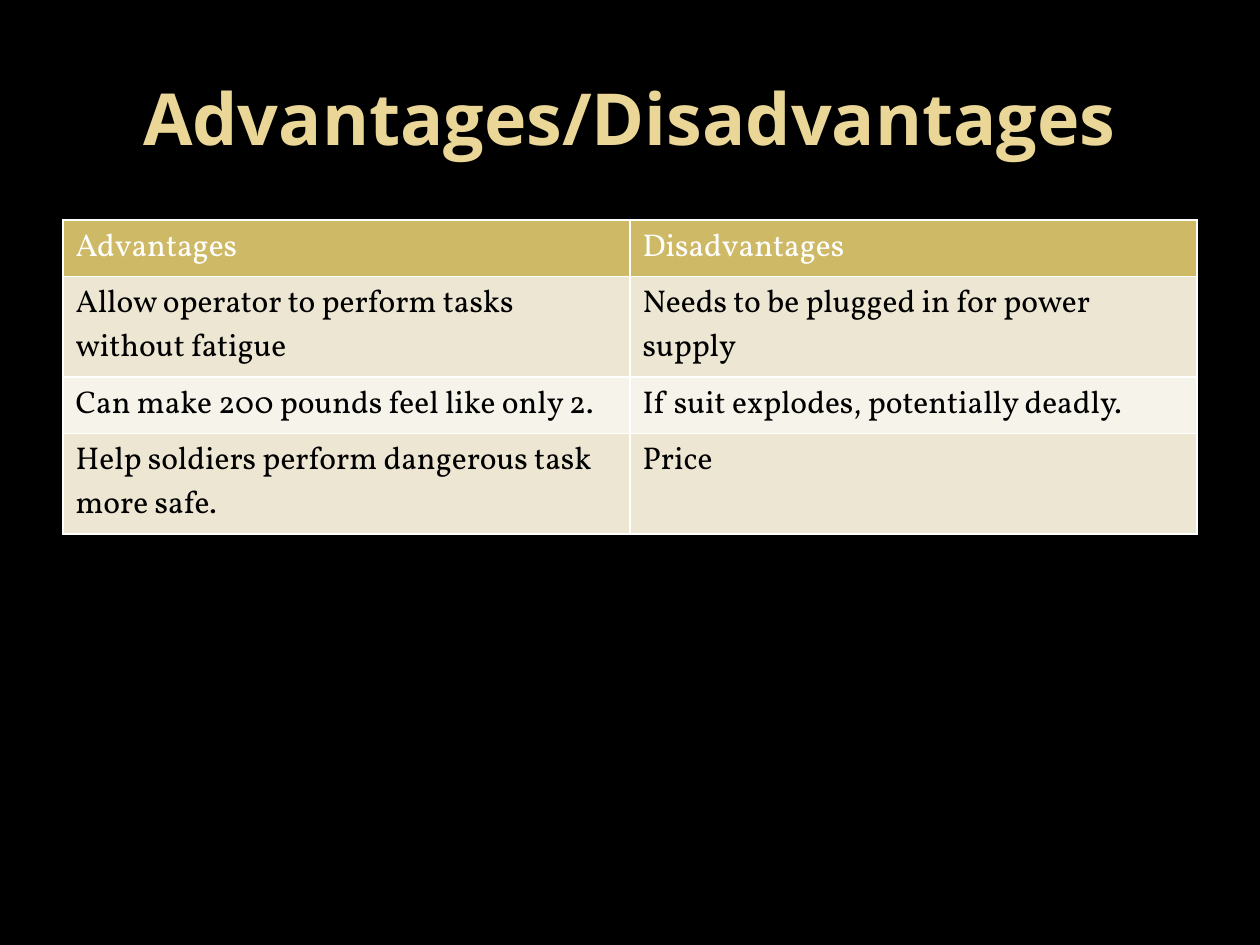
from dataclasses import dataclass

from lxml import etree
from pptx import Presentation
from pptx.dml.color import RGBColor
from pptx.enum.text import MSO_ANCHOR, PP_ALIGN
from pptx.oxml.ns import qn
from pptx.util import Emu, Pt

CENTER = PP_ALIGN.CENTER
MIDDLE = MSO_ANCHOR.MIDDLE
EMU_PER_PX = 914400 / 126
TITLE_ONLY = 5


@dataclass(frozen=True)
class Theme:
    background: str = "000000"
    title: str = "EAD696"
    header: str = "CEB966"
    bands: tuple = ("EDE6D3", "F6F3EA")
    header_text: str = "FFFFFF"
    body_text: str = "000000"
    border: str = "FFFFFF"
    border_width: int = 1
    title_font: str = "Open Sans"
    body_font: str = "Vollkorn"
    title_size: int = 41
    body_size: int = 18


THEME = Theme()
ROWS = (
    ("Advantages", "Disadvantages"),
    ("Allow operator to perform tasks without fatigue",
     "Needs to be plugged in for power supply"),
    ("Can make 200 pounds feel like only 2.",
     "If suit explodes, potentially deadly."),
    ("Help soldiers perform dangerous task more safe.", "Price"),
)
ROW_HEIGHTS = (52, 88, 50, 88)


def px(length):
    return Emu(round(length * EMU_PER_PX))


def format_runs(text_frame, font, size, color, bold=False):
    for para in text_frame.paragraphs:
        for run in para.runs:
            run.font.name = font
            run.font.size = Pt(size)
            run.font.bold = bold
            run.font.color.rgb = RGBColor.from_string(color)


def add_borders(cell):
    properties = cell._tc.get_or_add_tcPr()
    for side in ("lnL", "lnR", "lnT", "lnB"):
        line = etree.SubElement(properties, qn(f"a:{side}"), w=str(Pt(THEME.border_width)))
        fill = etree.SubElement(line, qn("a:solidFill"))
        etree.SubElement(fill, qn("a:srgbClr"), val=THEME.border)


def place_title(page, box, text):
    title = page.shapes.title
    title.left, title.top, title.width, title.height = map(px, box)
    frame = title.text_frame
    frame.text = text
    frame.word_wrap = True
    frame.vertical_anchor = MIDDLE
    frame.paragraphs[0].alignment = CENTER
    format_runs(frame, THEME.title_font, THEME.title_size, THEME.title, bold=True)


def place_comparison(page, box):
    table = page.shapes.add_table(len(ROWS), len(ROWS[0]), *map(px, box)).table
    for column in table.columns:
        column.width = px(box[2] // len(ROWS[0]))
    for row_index, (texts, height) in enumerate(zip(ROWS, ROW_HEIGHTS)):
        table.rows[row_index].height = px(height)
        is_header = row_index == 0
        fill = THEME.header if is_header else THEME.bands[(row_index - 1) % 2]
        color = THEME.header_text if is_header else THEME.body_text
        for column_index, text in enumerate(texts):
            cell = table.cell(row_index, column_index)
            cell.text_frame.text = text
            format_runs(cell.text_frame, THEME.body_font, THEME.body_size, color)
            add_borders(cell)
            cell.fill.solid()
            cell.fill.fore_color.rgb = RGBColor.from_string(fill)


def main():
    deck = Presentation()
    deck.slide_width, deck.slide_height = px(1260), px(945)
    page = deck.slides.add_slide(deck.slide_layouts[TITLE_ONLY])
    background = page.background.fill
    background.solid()
    background.fore_color.rgb = RGBColor.from_string(THEME.background)
    place_title(page, (63, 38, 1134, 158), "Advantages/Disadvantages")
    place_comparison(page, (63, 220, 1134, sum(ROW_HEIGHTS)))
    deck.save("out.pptx")


if __name__ == "__main__":
    main()
